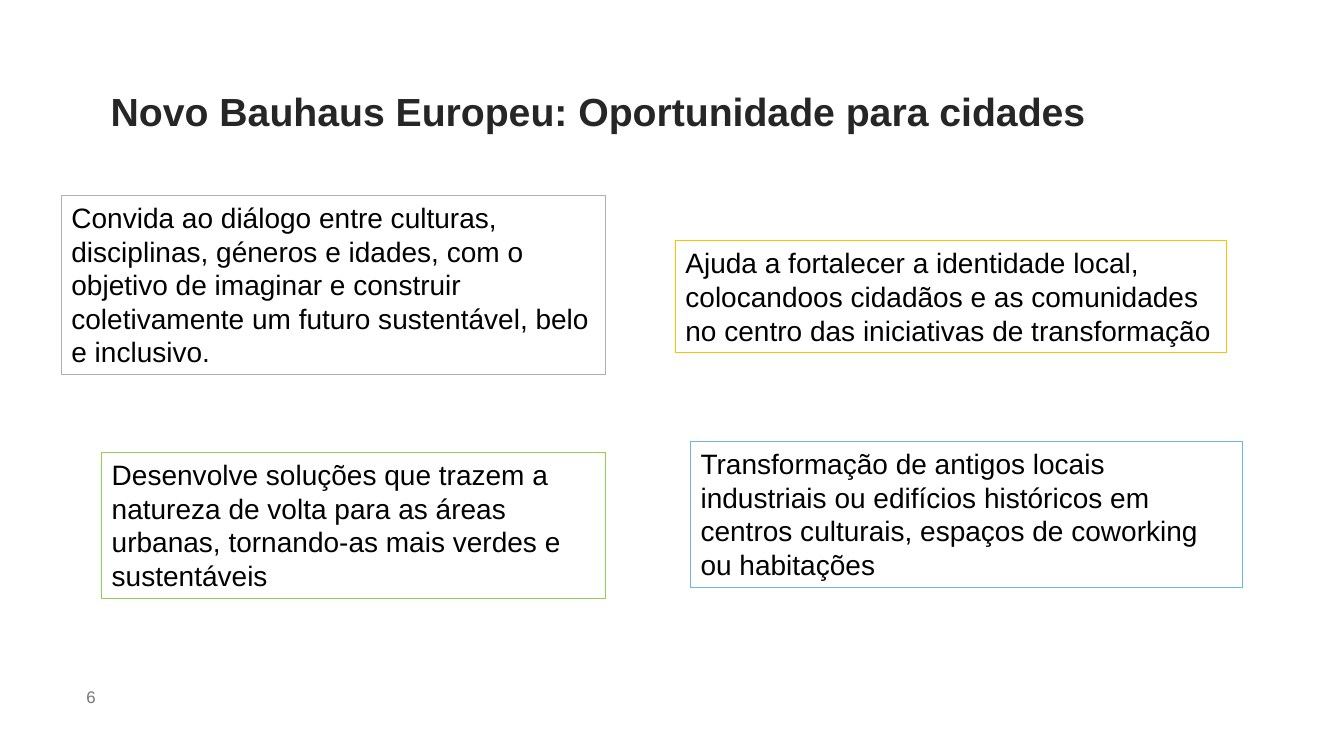
"""Builds the slide on the New European Bauhaus as an opportunity for cities."""
from pptx import Presentation
from pptx.dml.color import RGBColor
from pptx.enum.shapes import MSO_SHAPE
from pptx.enum.text import MSO_ANCHOR, PP_ALIGN
from pptx.util import Inches, Pt

COLORS = {
    "title": "262626",
    "body": "000000",
    "number": "767676",
    "gray": "AFAFAF",
    "green": "92D050",
    "yellow": "FFC000",
    "blue": "6EB3EB",
}


def write(shape, text, size, color, bold=False, anchor=MSO_ANCHOR.TOP):
    frame = shape.text_frame
    frame.word_wrap = True
    frame.vertical_anchor = anchor
    frame.text = text
    paragraph = frame.paragraphs[0]
    paragraph.alignment = PP_ALIGN.LEFT
    font = paragraph.runs[0].font
    font.name = "Arial"
    font.size = Pt(size)
    font.bold = bold
    font.color.rgb = RGBColor.from_string(COLORS[color])


presentation = Presentation()
presentation.slide_width = Inches(13.33)
presentation.slide_height = Inches(7.5)
slide = presentation.slides.add_slide(presentation.slide_layouts[6])

title = slide.shapes.add_textbox(Inches(1), Inches(0.82), Inches(11.17), Inches(0.57))
write(title, "Novo Bauhaus Europeu: Oportunidade para cidades", 28, "title", bold=True)

opportunities = [
    (0.61, 1.94, 5.4, 1.78, "gray",
     "Convida ao diálogo entre culturas, disciplinas, géneros e idades, com o objetivo "
     "de imaginar e construir coletivamente um futuro sustentável, belo e inclusivo."),
    (6.7, 2.39, 5.47, 1.11, "yellow",
     "Ajuda a fortalecer a identidade local, colocandoos cidadãos e as comunidades "
     "no centro das iniciativas de transformação"),
    (1.01, 4.49, 5, 1.45, "green",
     "Desenvolve soluções que trazem a natureza de volta para as áreas urbanas, "
     "tornando-as mais verdes e sustentáveis"),
    (6.85, 4.38, 5.47, 1.45, "blue",
     "Transformação de antigos locais industriais ou edifícios históricos em centros "
     "culturais, espaços de coworking ou habitações"),
]
for left, top, width, height, outline, text in opportunities:
    opportunity = slide.shapes.add_shape(
        MSO_SHAPE.RECTANGLE, Inches(left), Inches(top), Inches(width), Inches(height))
    opportunity.shadow.inherit = False
    opportunity.fill.background()
    opportunity.line.color.rgb = RGBColor.from_string(COLORS[outline])
    opportunity.line.width = Pt(0.75)
    write(opportunity, text, 20, "body")

page_number = slide.shapes.add_textbox(Inches(0.76), Inches(6.71), Inches(3), Inches(0.4))
write(page_number, "6", 12, "number", anchor=MSO_ANCHOR.MIDDLE)

presentation.save("out.pptx")
